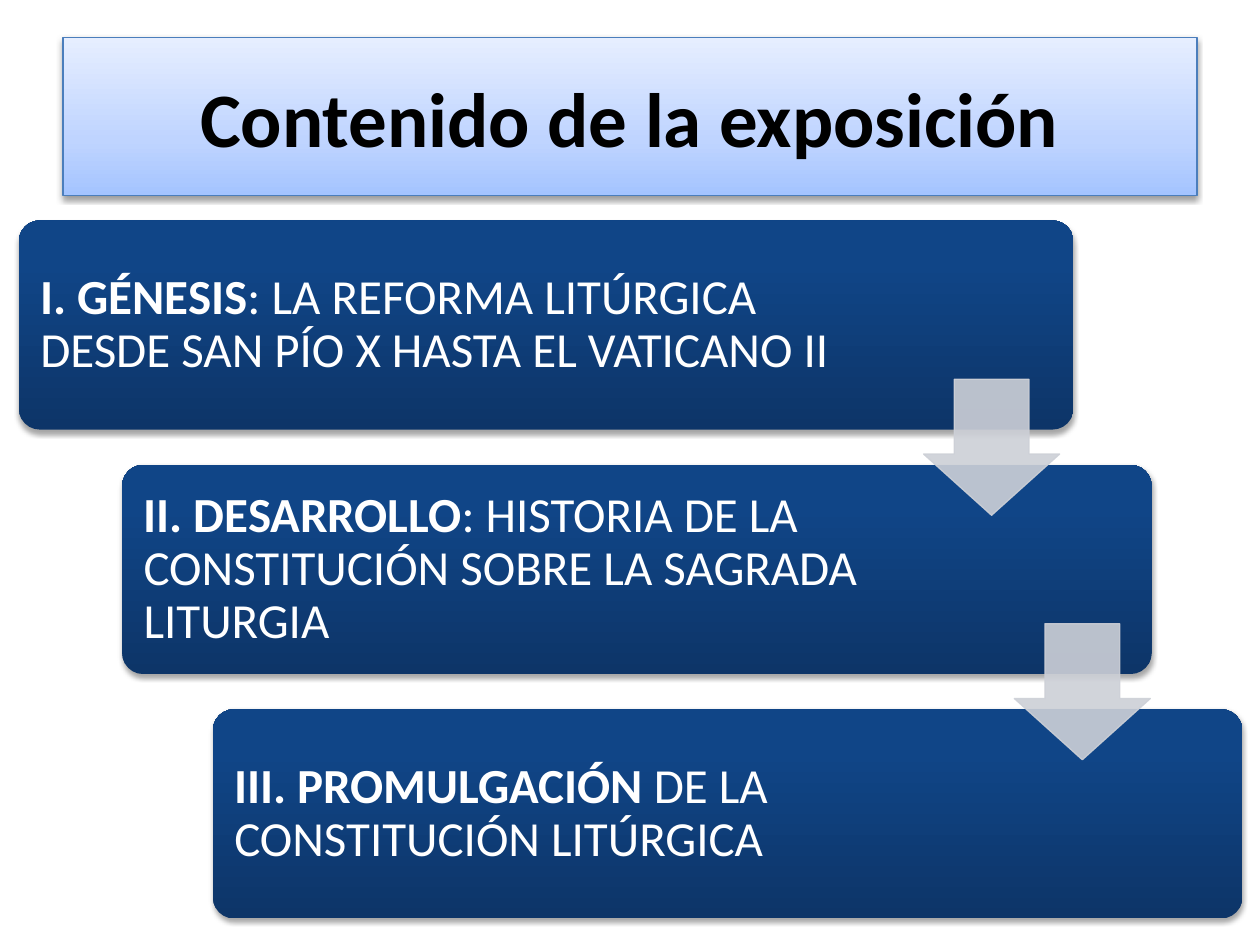
from lxml.etree import SubElement
from pptx import Presentation
from pptx.dml.color import RGBColor
from pptx.enum.shapes import MSO_SHAPE as SHAPE
from pptx.enum.text import MSO_ANCHOR as ANCHOR, PP_ALIGN as ALIGN
from pptx.oxml.ns import qn
from pptx.util import Inches, Pt

TITLE = "Contenido de la exposición"
# left, width, text width, bold lead, plain rest
STEPS = [
    (0.15, 8.37, 6.53, "I. GÉNESIS",
     ": LA REFORMA LITÚRGICA DESDE SAN PÍO X HASTA EL VATICANO II"),
    (0.97, 8.17, 6.27, "II. DESARROLLO",
     ": HISTORIA DE LA CONSTITUCIÓN SOBRE LA SAGRADA LITURGIA"),
    (1.69, 8.17, 6.27, "III. PROMULGACIÓN ",
     "DE LA CONSTITUCIÓN LITÚRGICA"),
]
ARROWS = [7.33, 8.05]
TOP, PITCH, HIGH, PAD = 1.75, 1.94, 1.66, 0.05
ARROW_TOP, ARROW = 3.01, 1.08

COLORS = {"black": "000000", "white": "FFFFFF", "edge": "4B7EBC", "arrow": "CDD0D7"}
PALE = [(0, "A4C4FF"), (35, "BFD4FF"), (100, "E6EEFF")]
NAVY = [(0, "0D3568"), (80, "104587"), (100, "0E458A")]


def rgb(name):
    return RGBColor.from_string(COLORS[name])


def add(parent, tag, **attrs):
    return SubElement(parent, qn(tag), {k: str(v) for k, v in attrs.items()})


def shade(shape, stops):
    """Fill with a gradient that runs from the bottom up."""
    shape.fill.background()
    props = shape._element.spPr
    old = props.find(qn("a:noFill"))
    grad = add(props, "a:gradFill", rotWithShape=1)
    props.replace(old, grad)
    group = add(grad, "a:gsLst")
    for pos, color in stops:
        add(add(group, "a:gs", pos=pos * 1000), "a:srgbClr", val=color)
    add(grad, "a:lin", ang=270 * 60000, scaled=0)


def cast(shape, dist, alpha):
    """Drop a soft shadow straight down."""
    effects = shape._element.spPr.find(qn("a:effectLst"))
    drop = add(effects, "a:outerShdw", blurRad=Pt(3.1), dist=Pt(dist),
               dir=90 * 60000, rotWithShape=0)
    color = add(drop, "a:srgbClr", val=COLORS["black"])
    add(color, "a:alpha", val=alpha * 1000)


def draw(slide, kind, *box, line=None, adjust=()):
    shape = slide.shapes.add_shape(kind, *map(Inches, box))
    shape.shadow.inherit = False
    for i, value in enumerate(adjust):
        shape.adjustments[i] = value
    if line:
        shape.line.color.rgb = rgb(line)
        shape.line.width = Pt(0.75)
    else:
        shape.line.fill.background()
    return shape


def write(shape, runs, size, color, align=ALIGN.LEFT, inset=None, spacing=None, after=0):
    frame = shape.text_frame
    frame.word_wrap = True
    frame.vertical_anchor = ANCHOR.MIDDLE
    if inset is not None:
        frame.margin_left = frame.margin_right = Inches(inset)
        frame.margin_top = frame.margin_bottom = Inches(inset)
    para = frame.paragraphs[0]
    para.alignment = align
    para.line_spacing = spacing
    para.space_after = Pt(after)
    for text, bold in runs:
        run = para.add_run()
        run.text = text
        font = run.font
        font.name, font.size, font.bold = "Calibri", Pt(size), bold
        font.color.rgb = rgb(color)


def main():
    deck = Presentation()
    deck.slide_width, deck.slide_height = Inches(10), Inches(7.5)
    slide = deck.slides.add_slide(deck.slide_layouts[6])

    title = draw(slide, SHAPE.RECTANGLE, 0.5, 0.3, 9, 1.25, line="edge")
    shade(title, PALE)
    cast(title, 1.6, 38)
    write(title, [(TITLE, True)], 44, "black", align=ALIGN.CENTER)

    for i, (left, wide, room, lead, rest) in enumerate(STEPS):
        top = TOP + i * PITCH
        card = draw(slide, SHAPE.ROUNDED_RECTANGLE, left, top, wide, HIGH, adjust=[0.1])
        shade(card, NAVY)
        cast(card, 1.8, 35)
        area = (left + PAD, top + PAD, room, HIGH - 2 * PAD)
        label = slide.shapes.add_textbox(*map(Inches, area))
        write(label, [(lead, True), (rest, False)], 28, "white",
              inset=0.12, spacing=0.9, after=9.8)

    for i, left in enumerate(ARROWS):
        arrow = draw(slide, SHAPE.DOWN_ARROW, left, ARROW_TOP + i * PITCH, ARROW, ARROW,
                     line="arrow", adjust=[0.55, 0.45])
        arrow.fill.solid()
        arrow.fill.fore_color.rgb = rgb("arrow")
        for color in arrow._element.spPr.iter(qn("a:srgbClr")):
            add(color, "a:alpha", val=90000)

    deck.save("out.pptx")


if __name__ == "__main__":
    main()
